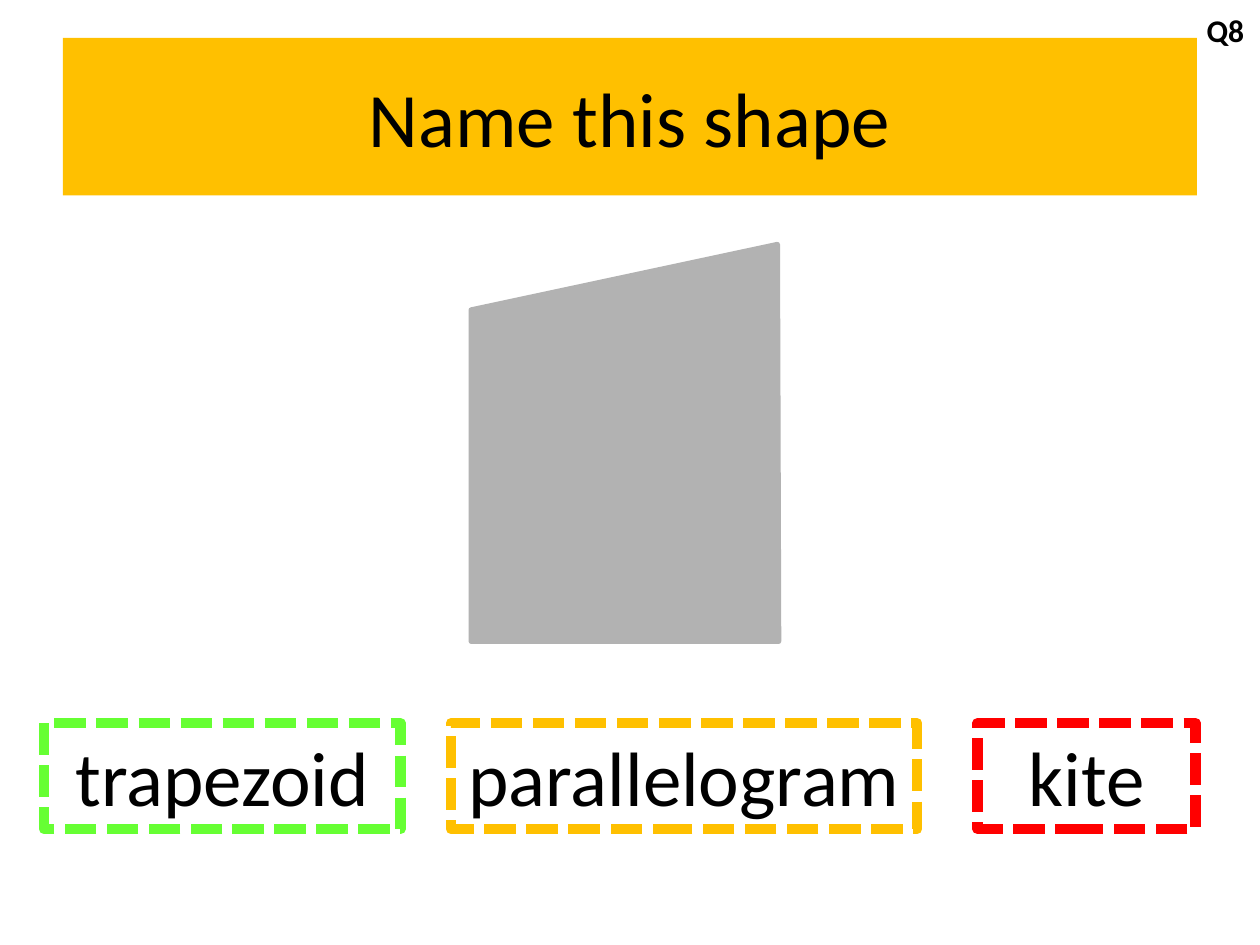
import pptx
import pptx.dml.color
import pptx.enum.dml
import pptx.enum.shapes
import pptx.enum.text
import pptx.util

Inches = pptx.util.Inches
Pt = pptx.util.Pt

COLORS = {
    "black": "000000",
    "amber": "FFC000",
    "grey": "B2B2B2",
    "green": "66FF33",
    "red": "FF0000",
}


def color(name):
    return pptx.dml.color.RGBColor.from_string(COLORS[name])


def write(shape, text, size=44, bold=False, wrap=True, middle=False):
    frame = shape.text_frame
    frame.word_wrap = wrap
    anchor = pptx.enum.text.MSO_ANCHOR
    frame.vertical_anchor = anchor.MIDDLE if middle else anchor.TOP
    para = frame.paragraphs[0]
    para.alignment = pptx.enum.text.PP_ALIGN.CENTER
    run = para.add_run()
    run.text = text
    run.font.name = "Calibri"
    run.font.size = Pt(size)
    run.font.bold = bold
    run.font.color.rgb = color("black")


def add_rect(slide, box):
    kind = pptx.enum.shapes.MSO_SHAPE.RECTANGLE
    rect = slide.shapes.add_shape(kind, *map(Inches, box))
    rect.shadow.inherit = False
    return rect


def add_title(slide, box, text):
    rect = add_rect(slide, box)
    rect.fill.solid()
    rect.fill.fore_color.rgb = color("amber")
    rect.line.fill.background()
    write(rect, text, middle=True)


def add_label(slide, box, text):
    label = slide.shapes.add_textbox(*map(Inches, box))
    write(label, text, size=18, bold=True, wrap=False)


def add_figure(slide, box):
    left, top, width, height = box
    right, bottom = left + width, top + height
    # The left side is shorter than the right
    corners = [(right - 0.01, top), (left, top + 0.52), (left, bottom)]
    points = [(Inches(x), Inches(y)) for x, y in corners]
    outline = slide.shapes.build_freeform(Inches(right), Inches(bottom))
    outline.add_line_segments(points, close=True)
    figure = outline.convert_to_shape()
    figure.shadow.inherit = False
    figure.fill.solid()
    figure.fill.fore_color.rgb = color("grey")
    figure.line.color.rgb = color("grey")
    figure.line.width = Pt(3)


def add_answer(slide, box, text, tint):
    rect = add_rect(slide, box)
    rect.fill.background()
    rect.line.color.rgb = color(tint)
    rect.line.width = Pt(6)
    rect.line.dash_style = pptx.enum.dml.MSO_LINE.SQUARE_DOT
    write(rect, text, wrap=False)


def main():
    deck = pptx.Presentation()
    deck.slide_width = Inches(10)
    deck.slide_height = Inches(7.5)
    slide = deck.slides.add_slide(deck.slide_layouts[6])

    # Question
    add_title(slide, (0.5, 0.3, 9, 1.25), "Name this shape")
    add_label(slide, (9.41, 0.04, 0.63, 0.4), "Q8")
    add_figure(slide, (3.74, 1.94, 2.44, 3.15))

    # Choices share one row
    answers = [
        ("trapezoid", "green", 0.35, 2.83),
        ("parallelogram", "amber", 3.58, 3.7),
        ("kite", "red", 7.76, 1.73),
    ]
    for text, tint, left, width in answers:
        add_answer(slide, (left, 5.74, width, 0.84), text, tint)

    deck.save("out.pptx")


if __name__ == "__main__":
    main()
